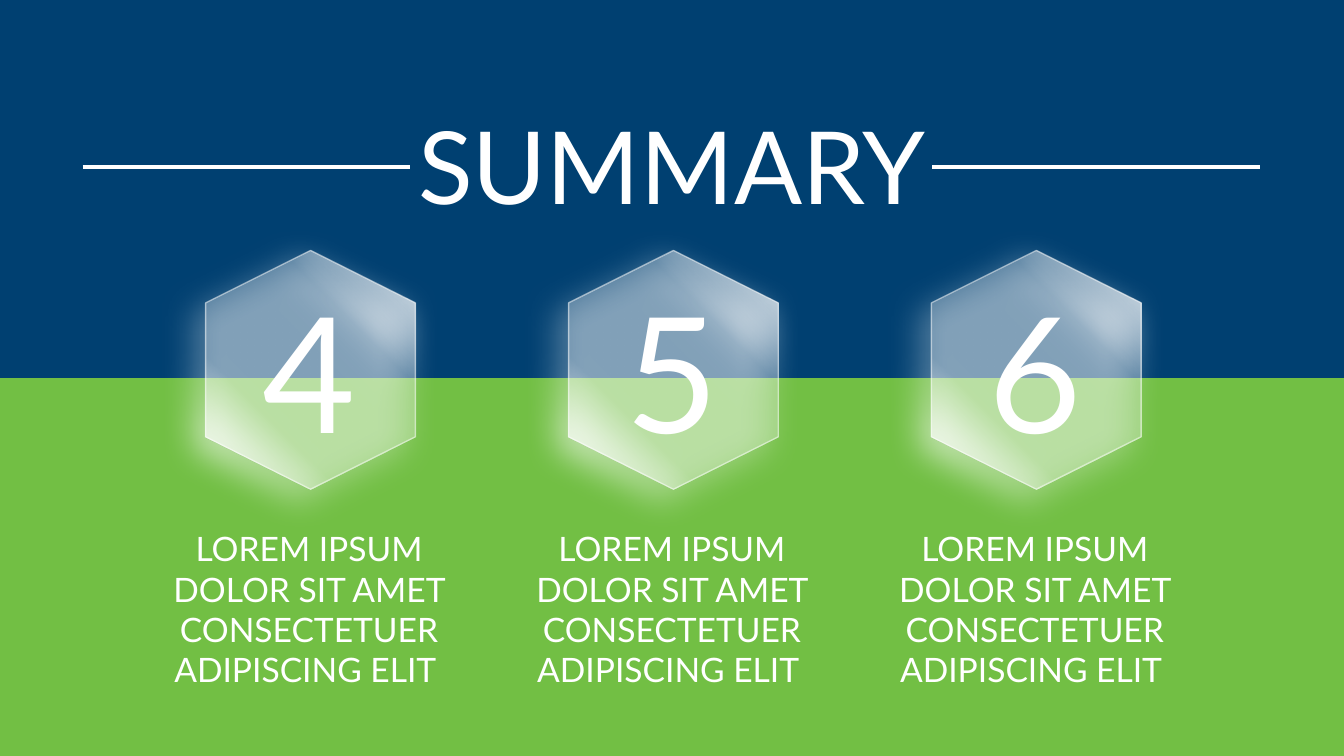
"""Build a summary slide with three glass hexagons over a two-colour background."""
from lxml import etree
from pptx import Presentation
from pptx.dml.color import RGBColor
from pptx.enum.shapes import MSO_CONNECTOR, MSO_SHAPE
from pptx.enum.text import MSO_ANCHOR, MSO_AUTO_SIZE, PP_ALIGN
from pptx.oxml import parse_xml
from pptx.oxml.ns import qn
from pptx.util import Pt

RECTANGLE = MSO_SHAPE.RECTANGLE
HEXAGON = MSO_SHAPE.HEXAGON
STRAIGHT = MSO_CONNECTOR.STRAIGHT
CENTER = PP_ALIGN.CENTER
TOP = MSO_ANCHOR.TOP
NO_AUTOFIT = MSO_AUTO_SIZE.NONE

TITLE = "SUMMARY"
BODY = ["LOREM IPSUM", "DOLOR SIT AMET CONSECTETUER ADIPISCING ELIT "]
ITEMS = [("4", BODY), ("5", BODY), ("6", BODY)]

WHITE, BLUE, GREEN = "FFFFFF", "004071", "72BF44"
FONT = "Lato"
WIDTH, HEIGHT = 960, 540
BANDS = [(0, 330, BLUE), (270, 270, GREEN)]
RULES = [(59, 293), (666, 900)]
RULE_Y = 119.5
COLUMN_STEP = 259.2
HEXAGON_SIZE = (170.6, 149.8)
HEXAGON_MIDDLE = 264.2
GLASS_STOPS = [(0, 100), (30, 30), (70, 30), (100, 100)]
NAMESPACE = "http://schemas.openxmlformats.org/drawingml/2006/main"


def color(value):
    return RGBColor.from_string(value)


def white_xml(alpha):
    return f'<a:srgbClr val="{WHITE}"><a:alpha val="{alpha * 1000}"/></a:srgbClr>'


def write_text(shape, lines, size):
    frame = shape.text_frame
    frame.word_wrap = True
    frame.auto_size = NO_AUTOFIT
    frame.vertical_anchor = TOP
    paragraph = frame.paragraphs[0]
    paragraph.alignment = CENTER
    paragraph.line_spacing = 1.0
    for index, line in enumerate(lines):
        if index:
            paragraph.add_line_break()
        run = paragraph.add_run()
        run.text = line
        run.font.name = FONT
        run.font.size = Pt(size)
        run.font.color.rgb = color(WHITE)


def add_text(shapes, box, lines, size):
    write_text(shapes.add_textbox(*map(Pt, box)), lines, size)


def add_band(slide, top, height, fill):
    band = slide.shapes.add_shape(RECTANGLE, 0, Pt(top), Pt(WIDTH), Pt(height))
    band.shadow.inherit = False
    band.fill.solid()
    band.fill.fore_color.rgb = color(fill)
    band.line.fill.background()


def add_glass_hexagon(shapes, center):
    width, height = HEXAGON_SIZE
    hexagon = shapes.add_shape(HEXAGON, Pt(center - width / 2),
                               Pt(HEXAGON_MIDDLE - height / 2), Pt(width), Pt(height))
    hexagon.rotation = 90
    hexagon.fill.background()
    hexagon.line.width = Pt(1)
    hexagon.line.color.rgb = color(WHITE)
    hexagon.shadow.inherit = False
    properties = hexagon.element.spPr
    stops = "".join(f'<a:gs pos="{position * 1000}">{white_xml(alpha)}</a:gs>'
                    for position, alpha in GLASS_STOPS)
    gradient = parse_xml(f'<a:gradFill xmlns:a="{NAMESPACE}" rotWithShape="1"><a:gsLst>{stops}'
                         '</a:gsLst><a:lin ang="2700000" scaled="0"/></a:gradFill>')
    properties.replace(properties.find(qn("a:noFill")), gradient)
    line_color = properties.find(qn("a:ln")).find(".//" + qn("a:srgbClr"))
    etree.SubElement(line_color, qn("a:alpha"), val="50000")
    glow = parse_xml(f'<a:outerShdw xmlns:a="{NAMESPACE}" blurRad="{Pt(24)}" dist="{Pt(11)}" '
                     f'dir="8100000" algn="ctr" rotWithShape="0">{white_xml(100)}</a:outerShdw>')
    properties.find(qn("a:effectLst")).append(glow)


def add_rule(slide, start, end):
    rule = slide.shapes.add_connector(STRAIGHT, Pt(start), Pt(RULE_Y), Pt(end), Pt(RULE_Y))
    rule.line.width = Pt(3)
    rule.line.color.rgb = color(WHITE)
    etree.SubElement(rule.element.spPr, qn("a:effectLst"))


def add_title(slide):
    title = slide.shapes.title
    title.left, title.top, title.width, title.height = map(Pt, (0, 70.6, WIDTH, 94.3))
    write_text(title, [TITLE], 72)
    title.element.getparent().append(title.element)


def main():
    presentation = Presentation()
    presentation.slide_width, presentation.slide_height = Pt(WIDTH), Pt(HEIGHT)
    slide = presentation.slides.add_slide(presentation.slide_layouts[5])
    for band in BANDS:
        add_band(slide, *band)
    for index, (number, lines) in enumerate(ITEMS):
        center = WIDTH / 2 + (index - (len(ITEMS) - 1) / 2) * COLUMN_STEP
        shapes = slide.shapes.add_group_shape().shapes
        add_text(shapes, (center - 111.2, 373.7, 222.4, 123.8), lines, 24)
        add_glass_hexagon(shapes, center + 1)
        add_text(shapes, (center - 85, 190.8, 170, 146.9), [number], 115)
    for start, end in RULES:
        add_rule(slide, start, end)
    add_title(slide)
    presentation.save("out.pptx")


if __name__ == "__main__":
    main()
